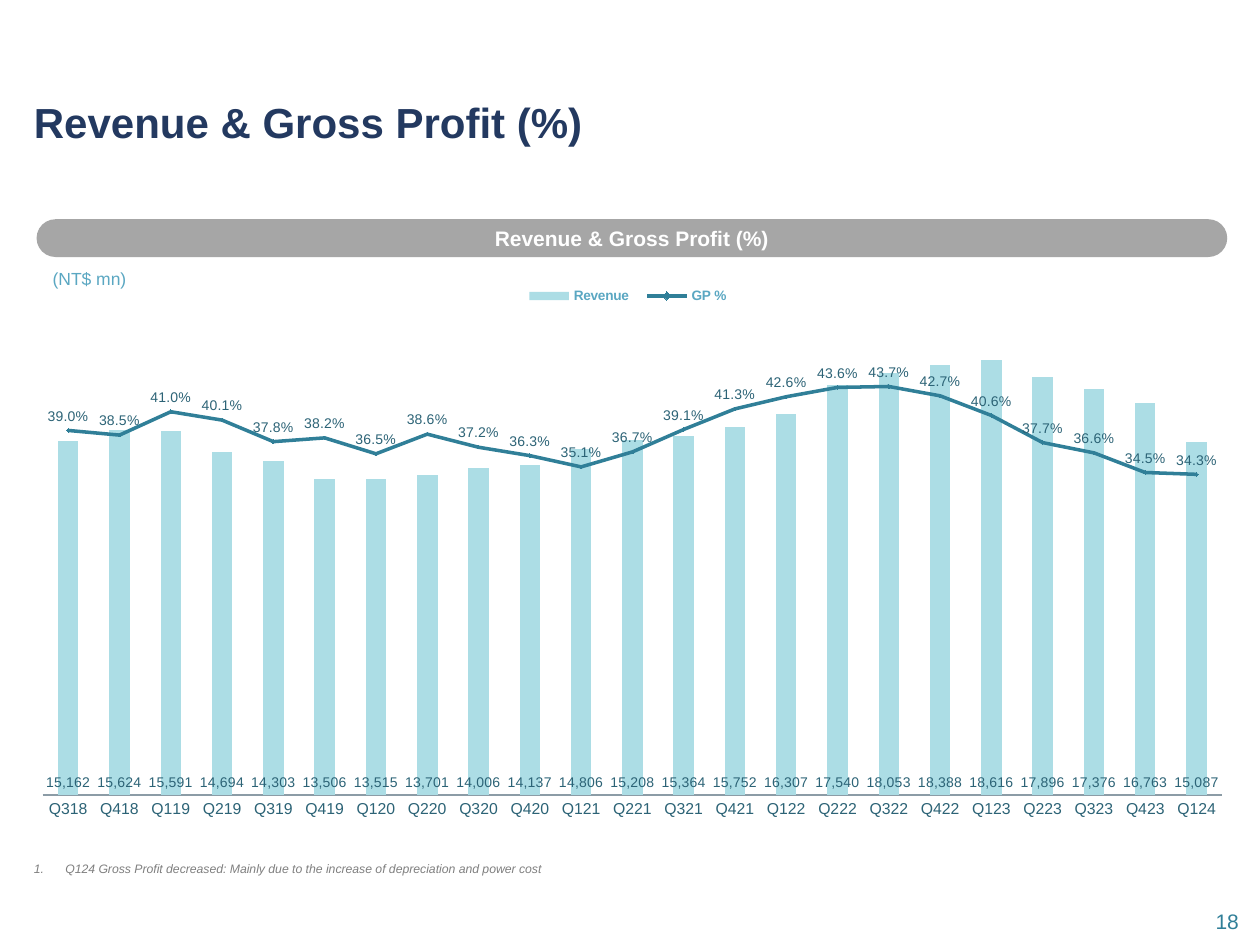
import pptx
import pptx.chart.data
import pptx.dml.color
import pptx.enum.chart
import pptx.enum.shapes
import pptx.enum.text
import pptx.oxml
import pptx.oxml.ns
import pptx.util
from lxml import etree

Pt = pptx.util.Pt
qn = pptx.oxml.ns.qn
ALIGN = pptx.enum.text.PP_ALIGN
ANCHOR = pptx.enum.text.MSO_ANCHOR
CHART = pptx.enum.chart

FONT = "Arial"
NAVY, TEAL, SKY, PALE, SLATE = "233960", "307F98", "5AA7C2", "ACDDE5", "2C6376"
HEADING = "Revenue & Gross Profit (%)"
REVENUE_FORMAT = r'_(* #,##0_);_(* \(#,##0\);_(* "-"??_);_('

QUARTERS = [
    ("Q318", 15162, 0.390), ("Q418", 15624, 0.385), ("Q119", 15591, 0.410),
    ("Q219", 14694, 0.401), ("Q319", 14303, 0.378), ("Q419", 13506, 0.382),
    ("Q120", 13515, 0.365), ("Q220", 13701, 0.386), ("Q320", 14006, 0.372),
    ("Q420", 14137, 0.363), ("Q121", 14806, 0.351), ("Q221", 15208, 0.367),
    ("Q321", 15364, 0.391), ("Q421", 15752, 0.413), ("Q122", 16307, 0.426),
    ("Q222", 17540, 0.436), ("Q322", 18053, 0.437), ("Q422", 18388, 0.427),
    ("Q123", 18616, 0.406), ("Q223", 17896, 0.377), ("Q323", 17376, 0.366),
    ("Q423", 16763, 0.345), ("Q124", 15087, 0.343),
]

# text, place (left, top, width, height), font, frame, paragraph
TEXTS = [
    ("(NT$ mn)", (23, 149.8, 56.9, 19.4), dict(size=10, color=SKY),
     dict(word_wrap=False), {}),
    (HEADING, (19.4, 15.1, 470.9, 69.1), dict(size=24, color=NAVY, bold=True),
     dict(vertical_anchor=ANCHOR.BOTTOM, margin=0), dict(line_spacing=1.2)),
    ("18", (679.7, 508.3, 43.2, 36), dict(size=12, color=TEAL),
     dict(vertical_anchor=ANCHOR.MIDDLE), dict(alignment=ALIGN.CENTER)),
    ("Q124 Gross Profit decreased: Mainly due to the increase of depreciation and power cost",
     (19.4, 478.8, 700.6, 21.6), dict(size=7, color="7F7F7F", italic=True),
     dict(vertical_anchor=ANCHOR.BOTTOM, margin=0), dict(line_spacing=0.9, numbered=True)),
]

LINE_PLOT = """<c:lineChart %s><c:grouping val="standard"/><c:varyColors val="0"/>
<c:marker val="1"/><c:axId val="501"/><c:axId val="502"/></c:lineChart>"""
SECOND_CATEGORIES = """<c:catAx %s><c:axId val="501"/>
<c:scaling><c:orientation val="minMax"/></c:scaling><c:delete val="1"/>
<c:axPos val="b"/><c:crossAx val="502"/><c:crosses val="autoZero"/></c:catAx>"""
SECOND_VALUES = """<c:valAx %s><c:axId val="502"/>
<c:scaling><c:orientation val="minMax"/><c:max val="0.5"/><c:min val="0"/></c:scaling>
<c:delete val="0"/><c:axPos val="r"/><c:numFmt formatCode="0.0%%" sourceLinked="0"/>
<c:majorTickMark val="none"/><c:minorTickMark val="none"/><c:tickLblPos val="none"/>
<c:spPr><a:ln><a:noFill/></a:ln></c:spPr>
<c:crossAx val="501"/><c:crosses val="max"/></c:valAx>"""


def rgb(value):
    return pptx.dml.color.RGBColor.from_string(value)


def chart_xml(template):
    return pptx.oxml.parse_xml(template % pptx.oxml.ns.nsdecls("c", "a"))


def set_font(font, size, color, **styles):
    font.name, font.size = FONT, Pt(size)
    font.color.rgb = rgb(color)
    for name, value in styles.items():
        setattr(font, name, value)


def fill_solid(target, color):
    target.fill.solid()
    target.fill.fore_color.rgb = rgb(color)


def write(box, text, font, frame_format, paragraph_format):
    frame = box.text_frame
    frame.word_wrap = True
    frame_format, paragraph_format = dict(frame_format), dict(paragraph_format)
    if "margin" in frame_format:
        margin = Pt(frame_format.pop("margin"))
        for side in ("left", "top", "right", "bottom"):
            setattr(frame, "margin_" + side, margin)
    for name, value in frame_format.items():
        setattr(frame, name, value)
    para = frame.paragraphs[0]
    if paragraph_format.pop("numbered", False):
        properties = para._p.get_or_add_pPr()
        properties.set("marL", str(Pt(18)))
        properties.set("indent", str(-Pt(18)))
        etree.SubElement(properties, qn("a:buAutoNum"), type="arabicPeriod")
    for name, value in paragraph_format.items():
        setattr(para, name, value)
    span = para.add_run()
    span.text = text
    set_font(span.font, **font)


def set_layout(parent, after, x, y, w, h, inner=False):
    """Place a chart part by fractions of the chart's size."""
    for old in parent.findall(qn("c:layout")):
        parent.remove(old)
    layout = etree.Element(qn("c:layout"))
    manual = etree.SubElement(layout, qn("c:manualLayout"))
    values = [("layoutTarget", "inner")] if inner else []
    values += [("xMode", "edge"), ("yMode", "edge"), ("x", x), ("y", y), ("w", w), ("h", h)]
    for name, value in values:
        etree.SubElement(manual, qn("c:" + name), val=str(value))
    if after is None:
        parent.insert(0, layout)
    else:
        after.addnext(layout)


def move_to_line_plot(chart):
    """Turn the second column series into a line on a right-hand axis."""
    plot_area = chart._chartSpace.chart.plotArea
    columns = plot_area.find(qn("c:barChart"))
    series = columns.findall(qn("c:ser"))[1]
    for column_only in series.findall(qn("c:invertIfNegative")):
        series.remove(column_only)
    line_plot = chart_xml(LINE_PLOT)
    line_plot.find(qn("c:varyColors")).addnext(series)
    columns.addnext(line_plot)
    last_axis = plot_area.find(qn("c:valAx"))
    for template in (SECOND_VALUES, SECOND_CATEGORIES):
        last_axis.addnext(chart_xml(template))


def label_series(series, number_format, position):
    labels = series.data_labels
    labels.show_value = True
    labels.number_format, labels.number_format_is_linked = number_format, False
    labels.position = position
    set_font(labels.font, 8, SLATE)


def add_revenue_chart(page):
    names, revenue, profit = zip(*QUARTERS)
    data = pptx.chart.data.CategoryChartData()
    data.categories = names
    data.add_series("Revenue", revenue, REVENUE_FORMAT)
    data.add_series("GP %", profit, "0.0%")
    place = [Pt(v) for v in (23, 149.8, 678.2, 322.6)]
    chart = page.shapes.add_chart(CHART.XL_CHART_TYPE.COLUMN_CLUSTERED, *place, data).chart
    set_font(chart.font, 7.8, SLATE)
    chart.has_title = False
    categories, values = chart.category_axis, chart.value_axis
    move_to_line_plot(chart)

    columns, lines = chart.plots
    columns.gap_width, columns.vary_by_categories = 150, False
    bars, margin = columns.series[0], lines.series[0]
    bars.invert_if_negative = False
    fill_solid(bars.format, PALE)
    label_series(bars, REVENUE_FORMAT, CHART.XL_LABEL_POSITION.INSIDE_BASE)
    margin.smooth = False
    margin.format.line.width = Pt(2)
    margin.format.line.color.rgb = rgb(TEAL)
    margin.marker.style, margin.marker.size = CHART.XL_MARKER_STYLE.DIAMOND, 2
    fill_solid(margin.marker.format, TEAL)
    margin.marker.format.line.fill.background()
    label_series(margin, "0.0%", CHART.XL_LABEL_POSITION.ABOVE)

    for axis in (categories, values):
        axis.has_major_gridlines = False
        axis.major_tick_mark = axis.minor_tick_mark = CHART.XL_TICK_MARK.NONE
    set_font(categories.tick_labels.font, 9, SLATE)
    categories.format.line.width = Pt(0.75)
    categories.format.line.color.rgb = rgb("8C9CA6")
    values.minimum_scale, values.maximum_scale = 0, 20000
    values.tick_label_position = CHART.XL_TICK_LABEL_POSITION.NONE
    values.format.line.fill.background()

    chart.has_legend = True
    legend = chart.legend
    legend.position = CHART.XL_LEGEND_POSITION.RIGHT
    legend.include_in_layout = False
    set_font(legend.font, 7.8, SKY, bold=True)
    set_layout(legend._element, legend._element.find(qn("c:legendPos")), 0.4, 0.03, 0.19, 0.06)
    set_layout(chart._chartSpace.chart.plotArea, None, 0.002, 0.116, 0.994, 0.828, inner=True)


def add_banner(page):
    place = [Pt(v) for v in (20.9, 125.3, 680.4, 21.6)]
    banner = page.shapes.add_shape(pptx.enum.shapes.MSO_SHAPE.ROUNDED_RECTANGLE, *place)
    banner.adjustments[0] = 0.5
    banner.shadow.inherit = False
    fill_solid(banner, "A6A6A6")
    banner.line.fill.background()
    write(banner, HEADING, dict(size=12, color="FFFFFF", bold=True),
          dict(vertical_anchor=ANCHOR.MIDDLE), dict(alignment=ALIGN.CENTER))


def main():
    deck = pptx.Presentation()
    deck.slide_width, deck.slide_height = Pt(720), Pt(540)
    page = deck.slides.add_slide(deck.slide_layouts[6])
    add_revenue_chart(page)
    add_banner(page)
    for text, place, *formats in TEXTS:
        write(page.shapes.add_textbox(*[Pt(v) for v in place]), text, *formats)
    deck.save("out.pptx")


if __name__ == "__main__":
    main()
